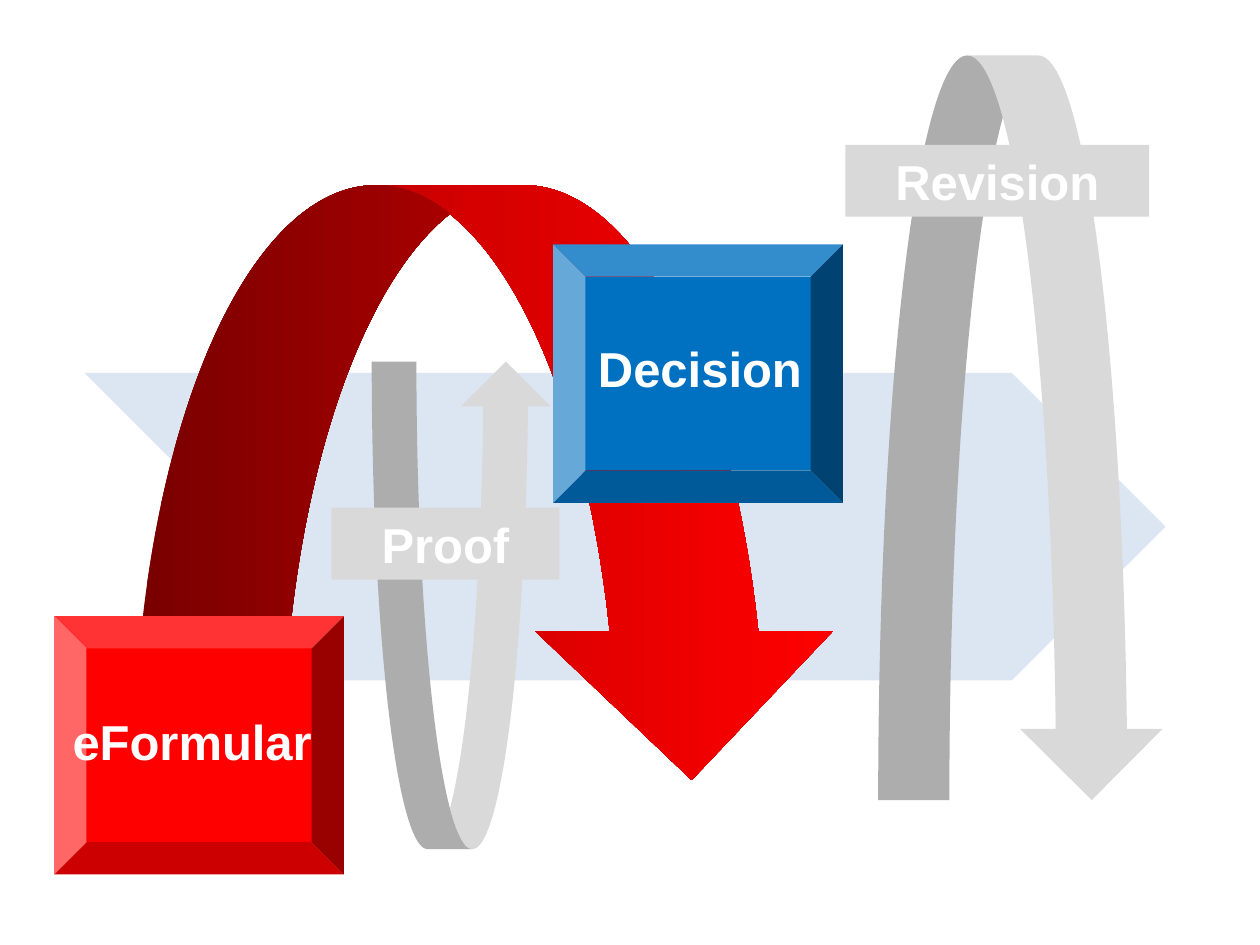
from copy import deepcopy

from pptx import Presentation
from pptx.dml.color import RGBColor
from pptx.enum.shapes import MSO_SHAPE
from pptx.enum.text import MSO_AUTO_SIZE, PP_ALIGN
from pptx.oxml.ns import qn
from pptx.util import Inches, Pt

CHEVRON = MSO_SHAPE.CHEVRON
ARROW_UP = MSO_SHAPE.CURVED_UP_ARROW
ARROW_DOWN = MSO_SHAPE.CURVED_DOWN_ARROW
BEVEL = MSO_SHAPE.BEVEL
RECTANGLE = MSO_SHAPE.RECTANGLE
CENTER = PP_ALIGN.CENTER
GROW = MSO_AUTO_SIZE.SHAPE_TO_FIT_TEXT

COLORS = {
    "pale blue": "DCE6F2",
    "gray": "D9D9D9",
    "blue": "0070C0",
    "red": "FF0000",
    "white": "FFFFFF",
    "dark red": "970000",
    "mid red": "D70000",
}
RED_STOPS = [(0, "dark red"), (0.5, "mid red"), (1, "red")]
LABEL_HEIGHT = 0.57
BOX_SIZE = (2.3, 2.05)

SHAPES = [
    (CHEVRON, (0.67, 2.96, 8.58, 2.44), "pale blue"),
    (ARROW_UP, (2.95, 2.87, 1.42, 3.87), "gray"),
    (ARROW_DOWN, (1.06, 1.47, 5.61, 4.72), RED_STOPS),
    (ARROW_DOWN, (6.97, 0.44, 2.26, 5.91), "gray"),
    (BEVEL, (4.39, 1.94, *BOX_SIZE), "blue"),
    (BEVEL, (0.43, 4.89, *BOX_SIZE), "red"),
]
LABELS = [
    ("Revision", (6.71, 1.15, 2.41), "gray"),
    ("Decision", (4.35, 2.64, 2.41), None),
    ("Proof", (2.63, 4.03, 1.81), "gray"),
    ("eFormular", (0.32, 5.6, 2.41), None),
]


def rgb(name):
    return RGBColor.from_string(COLORS[name])


def fill_gradient(shape, stops):
    fill = shape.fill
    fill.gradient()
    fill.gradient_angle = 0
    stop_list = shape._element.spPr.find(".//" + qn("a:gsLst"))
    while len(stop_list) < len(stops):
        stop_list.append(deepcopy(stop_list[0]))
    for stop, (position, color) in zip(fill.gradient_stops, stops):
        stop.position = position
        stop.color.rgb = rgb(color)


def add_filled_shape(slide, kind, box, fill):
    shape = slide.shapes.add_shape(kind, *map(Inches, box))
    shape.shadow.inherit = False
    shape.line.fill.background()
    if isinstance(fill, list):
        fill_gradient(shape, fill)
    else:
        shape.fill.solid()
        shape.fill.fore_color.rgb = rgb(fill)
    return shape


def add_label(slide, text, place, fill):
    box = (*place, LABEL_HEIGHT)
    if fill:
        shape = add_filled_shape(slide, RECTANGLE, box, fill)
    else:
        shape = slide.shapes.add_textbox(*map(Inches, box))
    frame = shape.text_frame
    frame.word_wrap = True
    frame.auto_size = GROW
    paragraph = frame.paragraphs[0]
    paragraph.alignment = CENTER
    run = paragraph.add_run()
    run.text = text
    run.font.name = "Arial"
    run.font.size = Pt(28)
    run.font.bold = True
    run.font.color.rgb = rgb("white")


def main():
    presentation = Presentation()
    presentation.slide_width = Inches(10)
    presentation.slide_height = Inches(7.5)
    slide = presentation.slides.add_slide(presentation.slide_layouts[6])
    for kind, box, fill in SHAPES:
        add_filled_shape(slide, kind, box, fill)
    for text, place, fill in LABELS:
        add_label(slide, text, place, fill)
    presentation.save("out.pptx")


if __name__ == "__main__":
    main()
